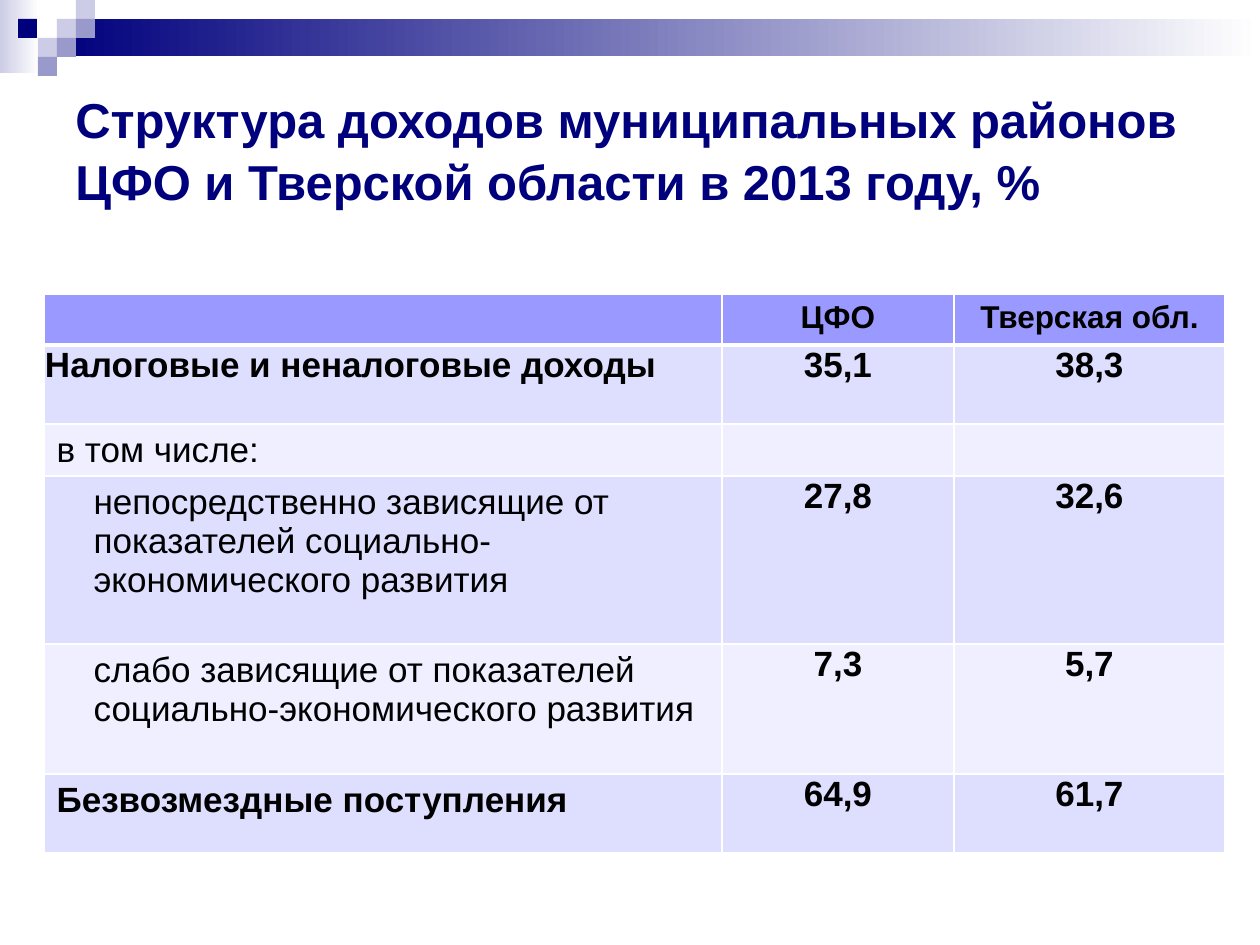
from dataclasses import dataclass

from lxml.etree import SubElement
from pptx import Presentation
from pptx.dml.color import RGBColor
from pptx.enum.shapes import MSO_SHAPE
from pptx.enum.text import MSO_ANCHOR, PP_ALIGN
from pptx.oxml.ns import qn
from pptx.util import Emu, Pt

SCALE = 914400 / 126


@dataclass(frozen=True)
class Theme:
    font: str = "Arial"
    navy: str = "00007D"
    mid: str = "9999CC"
    pale: str = "CCCCE6"
    white: str = "FFFFFF"
    black: str = "000000"
    head: str = "9999FF"
    bands: tuple[str, str] = ("DEDEFF", "EFEFFF")
    title: int = 28
    label: int = 18
    body: int = 20
    rule: int = 1
    thick: int = 3


@dataclass(frozen=True)
class Block:
    x: int
    y: int
    w: int
    h: int
    hue: str
    fade: bool = False


@dataclass(frozen=True)
class Row:
    text: str
    values: tuple[str, str]
    height: int
    bold: bool = False
    indent: int = 0
    tight: bool = False


THEME = Theme()
SIDE = 19
BLOCKS = [
    Block(0, 0, 39, 73, THEME.pale, True),
    Block(57, 19, 1203, 37, THEME.navy, True),
    *[Block(x, y, SIDE, SIDE, hue) for x, y, hue in (
        (57, 19, THEME.pale), (76, 0, THEME.pale), (76, 19, THEME.mid),
        (38, 38, THEME.pale), (18, 19, THEME.navy), (57, 38, THEME.mid),
        (38, 57, THEME.mid))],
]
COLS = (678, 232, 271)
ROWS = [
    Row("", ("ЦФО", "Тверская обл."), 51),
    Row("Налоговые и неналоговые доходы", ("35,1", "38,3"), 79,
        bold=True, tight=True),
    Row("в том числе:", ("", ""), 52),
    Row("непосредственно зависящие от показателей "
        "социально-экономического развития", ("27,8", "32,6"), 168, indent=37),
    Row("слабо зависящие от показателей социально-экономического развития",
        ("7,3", "5,7"), 130, indent=37),
    Row("Безвозмездные поступления", ("64,9", "61,7"), 79, bold=True),
]


def px(n: int) -> Emu:
    return Emu(round(n * SCALE))


def rgb(hue: str) -> RGBColor:
    return RGBColor.from_string(hue)


def write(para, text: str, size: int, hue: str, bold: bool) -> None:
    run = para.add_run()
    run.text = text
    font = run.font
    font.name, font.size, font.bold = THEME.font, Pt(size), bold
    font.color.rgb = rgb(hue)


def draw_block(slide, block: Block) -> None:
    shape = slide.shapes.add_shape(
        MSO_SHAPE.RECTANGLE, px(block.x), px(block.y), px(block.w), px(block.h))
    shape.shadow.inherit = False
    shape.line.fill.background()
    if block.fade:
        shape.fill.gradient()
        shape.fill.gradient_angle = 0
        for stop, hue in zip(shape.fill.gradient_stops, (block.hue, THEME.white)):
            stop.color.rgb = rgb(hue)
    else:
        shape.fill.solid()
        shape.fill.fore_color.rgb = rgb(block.hue)


def draw_title(slide, text: str) -> None:
    frame = slide.shapes.add_textbox(px(63), px(63), px(1162), px(171)).text_frame
    frame.word_wrap = True
    frame.vertical_anchor = MSO_ANCHOR.MIDDLE
    para = frame.paragraphs[0]
    para.line_spacing = 1.05
    write(para, text, THEME.title, THEME.navy, True)


def set_rules(cell, top: int, bottom: int) -> None:
    """Give the cell white borders; call before its fill is set."""
    props = cell._tc.get_or_add_tcPr()
    thin = THEME.rule
    for side, width in zip("LRTB", (thin, thin, top, bottom)):
        line = SubElement(props, qn(f"a:ln{side}"), w=str(Pt(width)))
        fill = SubElement(line, qn("a:solidFill"))
        SubElement(fill, qn("a:srgbClr"), val=THEME.white)


def fill_cell(cell, row: Row, r: int, c: int) -> None:
    set_rules(cell, THEME.thick if r == 1 else THEME.rule,
              THEME.thick if r == 0 else THEME.rule)
    cell.fill.solid()
    cell.fill.fore_color.rgb = rgb(THEME.bands[(r - 1) % 2] if r else THEME.head)
    text = row.values[c - 1] if c else row.text
    if not text:
        return
    if r and (c or row.tight):
        cell.margin_left = cell.margin_top = cell.margin_right = px(1)
        cell.margin_bottom = 0
    para = cell.text_frame.paragraphs[0]
    if c:
        para.alignment = PP_ALIGN.CENTER
    elif row.indent:
        props = para._p.get_or_add_pPr()
        props.set("marL", str(px(row.indent)))
        props.set("indent", "0")
    write(para, text, THEME.body if r else THEME.label, THEME.black,
          bool(c) or row.bold)


def draw_table(slide) -> None:
    table = slide.shapes.add_table(
        len(ROWS), len(COLS), px(44), px(294), px(sum(COLS)),
        px(sum(row.height for row in ROWS))).table
    for col, width in zip(table.columns, COLS):
        col.width = px(width)
    for r, row in enumerate(ROWS):
        table.rows[r].height = px(row.height)
        for c in range(len(COLS)):
            fill_cell(table.cell(r, c), row, r, c)


def main() -> None:
    deck = Presentation()
    deck.slide_width, deck.slide_height = px(1260), px(945)
    slide = deck.slides.add_slide(deck.slide_layouts[6])
    for block in BLOCKS:
        draw_block(slide, block)
    draw_table(slide)
    draw_title(slide, "Структура доходов муниципальных районов "
                      "ЦФО и Тверской области в 2013 году, %")
    deck.save("out.pptx")


if __name__ == "__main__":
    main()
